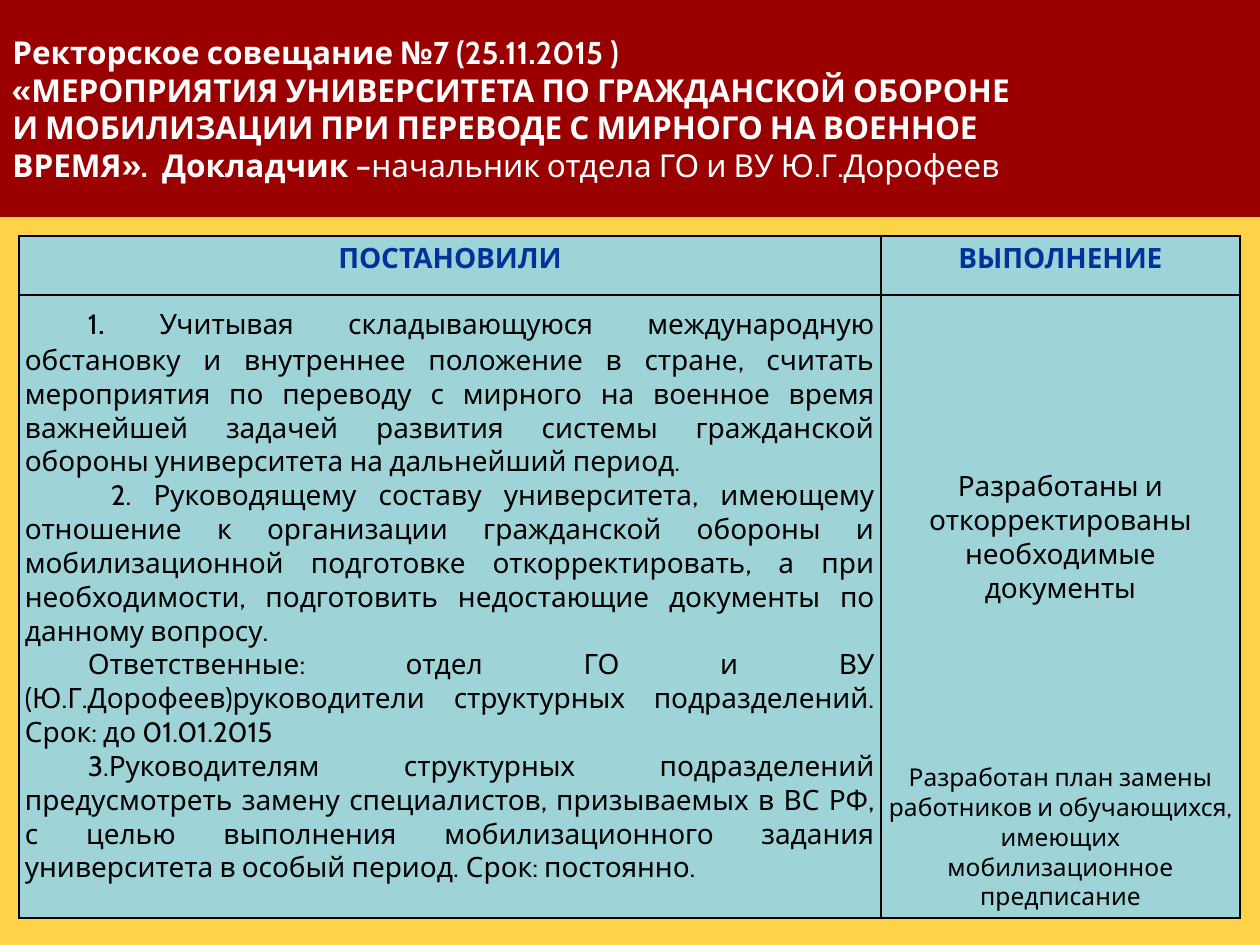
from lxml.etree import SubElement
from pptx import Presentation
from pptx.dml.color import RGBColor
from pptx.enum.shapes import MSO_SHAPE as Shape
from pptx.enum.text import MSO_ANCHOR as Anchor, PP_ALIGN as Align
from pptx.oxml.ns import qn
from pptx.util import Emu, Pt

FONT = "Cabin"
RED, YELLOW, TEAL = "9A0000", "FFD347", "9ED3D7"
BLUE, BLACK, WHITE = "003399", "000000", "FFFFFF"

TITLE = (
    "Ректорское совещание №7 (25.11.2015 )\n"
    "«МЕРОПРИЯТИЯ УНИВЕРСИТЕТА ПО ГРАЖДАНСКОЙ ОБОРОНЕ\n"
    "И МОБИЛИЗАЦИИ ПРИ ПЕРЕВОДЕ С МИРНОГО НА ВОЕННОЕ\n"
    "ВРЕМЯ».  Докладчик –"
)
SPEAKER = "начальник отдела ГО и ВУ Ю.Г.Дорофеев"
SITUATION = (
    " Учитывая складывающуюся международную обстановку и внутреннее положение "
    "в стране, считать мероприятия по переводу с мирного на военное время "
    "важнейшей задачей развития системы гражданской обороны университета "
    "на дальнейший период."
)
DOCUMENTS = (
    "2. Руководящему составу университета, имеющему отношение к организации "
    "гражданской обороны и мобилизационной подготовке откорректировать, а при "
    "необходимости, подготовить недостающие документы по данному вопросу."
)
RESPONSIBLE = (
    "Ответственные: отдел ГО и ВУ (Ю.Г.Дорофеев)руководители структурных "
    "подразделений.\nСрок: до 01.01.2015"
)
REPLACEMENT = (
    "3.Руководителям структурных подразделений предусмотреть замену "
    "специалистов, призываемых в ВС РФ, с целью выполнения мобилизационного "
    "задания университета в особый период.\tСрок: постоянно."
)
DOCUMENTS_DONE = "Разработаны и откорректированы необходимые документы"
REPLACEMENT_DONE = (
    "Разработан план замены работников и обучающихся, имеющих "
    "мобилизационное предписание"
)


def px(length):
    return Emu(length * 914400 // 126)


def rgb(color):
    return RGBColor.from_string(color)


def write(paragraph, text, size=16, color=BLACK, bold=False):
    """Append text to the paragraph; a newline becomes a line break."""
    for index, line in enumerate(text.split("\n")):
        if index:
            paragraph.add_line_break()
        run = paragraph.add_run()
        run.text = line
        run.font.name = FONT
        run.font.size = Pt(size)
        run.font.bold = bold
        run.font.color.rgb = rgb(color)


def next_paragraph(frame, align, indent=0, tab=None, space_before=0):
    """Use the empty first paragraph, or add one."""
    first = frame.paragraphs[0]
    paragraph = frame.add_paragraph() if first.runs else first
    properties = paragraph._p.get_or_add_pPr()
    if tab:
        tabs = SubElement(properties, qn("a:tabLst"))
        SubElement(tabs, qn("a:tab"), pos=str(px(tab)), algn="l")
    if indent:
        properties.set("marL", "0")
        properties.set("indent", str(px(indent)))
    if space_before:
        paragraph.space_before = Pt(space_before)
    paragraph.alignment = align
    return paragraph


def style_cell(cell):
    properties = cell._tc.get_or_add_tcPr()
    for side in ("lnL", "lnR", "lnT", "lnB"):
        line = SubElement(properties, qn(f"a:{side}"), w=str(Pt(1)))
        fill = SubElement(line, qn("a:solidFill"))
        SubElement(fill, qn("a:srgbClr"), val=BLACK)
    cell.fill.solid()
    cell.fill.fore_color.rgb = rgb(TEAL)
    cell.margin_left = cell.margin_right = px(6)
    cell.margin_top = cell.margin_bottom = px(6)


def add_title(slide):
    banner = slide.shapes.add_shape(Shape.RECTANGLE, 0, 0, px(1260), px(217))
    banner.shadow.inherit = False
    banner.fill.solid()
    banner.fill.fore_color.rgb = rgb(RED)
    banner.line.fill.background()
    frame = banner.text_frame
    frame.word_wrap = True
    frame.vertical_anchor = Anchor.MIDDLE
    paragraph = next_paragraph(frame, Align.LEFT)
    write(paragraph, TITLE, size=18, color=WHITE, bold=True)
    write(paragraph, SPEAKER, size=18, color=WHITE)


def add_table(slide):
    widths, heights = (862, 359), (59, 623)
    frame = slide.shapes.add_table(
        2, 2, px(19), px(236), px(sum(widths)), px(sum(heights)))
    table = frame.table
    table.first_row = table.horz_banding = False
    for column, width in zip(table.columns, widths):
        column.width = px(width)
    for row, height in zip(table.rows, heights):
        row.height = px(height)
    for cell in table.iter_cells():
        style_cell(cell)
    return table


def fill_headings(table):
    for column, heading in enumerate(("ПОСТАНОВИЛИ", "ВЫПОЛНЕНИЕ")):
        paragraph = next_paragraph(table.cell(0, column).text_frame, Align.CENTER)
        write(paragraph, heading, color=BLUE, bold=True)


def fill_decisions(cell):
    frame = cell.text_frame
    paragraph = next_paragraph(frame, Align.JUSTIFY, indent=63)
    write(paragraph, "1")
    write(paragraph, ".", size=20)
    write(paragraph, SITUATION)
    for text, indent, tab in ((DOCUMENTS, 86, None), (RESPONSIBLE, 63, None),
                              (REPLACEMENT, 63, 465)):
        write(next_paragraph(frame, Align.JUSTIFY, indent, tab), text)


def fill_results(cell):
    cell.vertical_anchor = Anchor.BOTTOM
    frame = cell.text_frame
    write(next_paragraph(frame, Align.CENTER), DOCUMENTS_DONE)
    paragraph = next_paragraph(frame, Align.CENTER, space_before=90)
    write(paragraph, REPLACEMENT_DONE, size=14)


def main():
    presentation = Presentation()
    presentation.slide_width, presentation.slide_height = px(1260), px(945)
    slide = presentation.slides.add_slide(presentation.slide_layouts[6])
    slide.background.fill.solid()
    slide.background.fill.fore_color.rgb = rgb(YELLOW)
    table = add_table(slide)
    fill_headings(table)
    fill_decisions(table.cell(1, 0))
    fill_results(table.cell(1, 1))
    add_title(slide)
    presentation.save("out.pptx")


if __name__ == "__main__":
    main()
